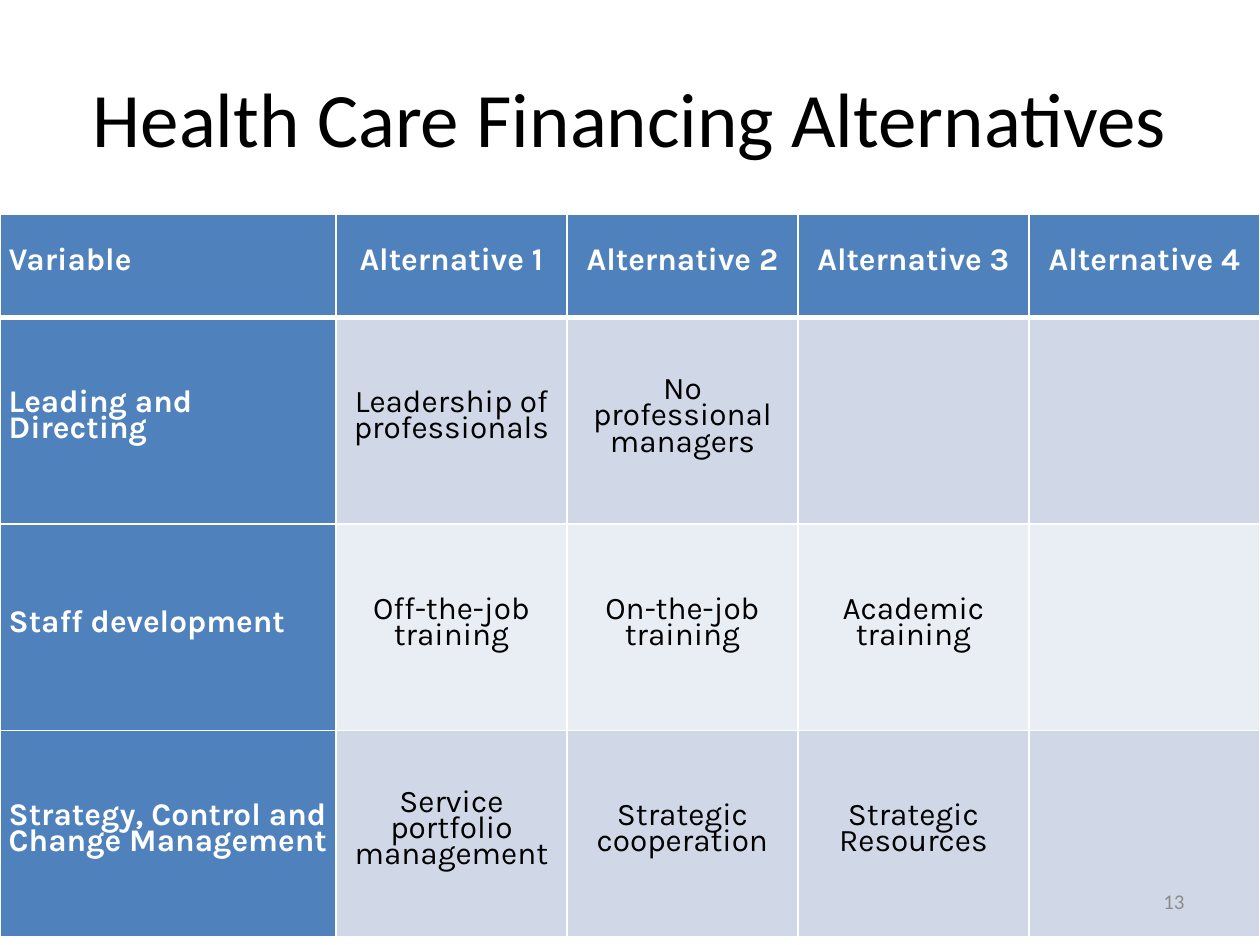
import pptx
import pptx.util
import pptx.dml.color
import pptx.enum.text
import pptx.oxml
import pptx.oxml.ns

Pt = pptx.util.Pt
RGB = pptx.dml.color.RGBColor
ALIGN = pptx.enum.text.PP_ALIGN
MIDDLE = pptx.enum.text.MSO_ANCHOR.MIDDLE

BLACK = RGB(0x00, 0x00, 0x00)
WHITE = RGB(0xFF, 0xFF, 0xFF)
GRAY = RGB(0x8C, 0x8C, 0x8C)
BLUE = RGB(0x4F, 0x81, 0xBD)
BANDS = [RGB(0xE9, 0xED, 0xF4), RGB(0xD0, 0xD8, 0xE8)]

ROWS = [
    ["Variable", "Alternative 1", "Alternative 2", "Alternative 3", "Alternative 4"],
    ["Leading and Directing", "Leadership of professionals",
     "No professional managers", "", ""],
    ["Staff development", "Off-the-job training", "On-the-job training",
     "Academic training", ""],
    ["Strategy, Control and Change Management", "Service portfolio management",
     "Strategic cooperation", "Strategic Resources", ""],
]


def style(par, name, size, color, align, bold=False):
    par.alignment = align
    for run in par.runs:
        run.font.name = name
        run.font.size = Pt(size)
        run.font.bold = bold
        run.font.color.rgb = color


def border(cell, side, width):
    cell._tc.get_or_add_tcPr().append(pptx.oxml.parse_xml(
        f'<a:{side} {pptx.oxml.ns.nsdecls("a")} w="{Pt(width)}">'
        f'<a:solidFill><a:srgbClr val="{WHITE}"/></a:solidFill></a:{side}>'))


prs = pptx.Presentation()
prs.slide_width, prs.slide_height = Pt(720), Pt(540)
slide = prs.slides.add_slide(prs.slide_layouts[5])

# Title
title = slide.shapes.title
title.left, title.top, title.width, title.height = Pt(36), Pt(21.6), Pt(648), Pt(90)
title.text_frame.text = "Health Care Financing Alternatives"
title.text_frame.vertical_anchor = MIDDLE
style(title.text_frame.paragraphs[0], "Calibri", 44, BLACK, ALIGN.CENTER)

# Table grid
table = slide.shapes.add_table(
    len(ROWS), len(ROWS[0]), Pt(0), Pt(122.4), Pt(720), Pt(413)).table
for c, col in enumerate(table.columns):
    col.width = Pt(132 if c else 192)
for r, row in enumerate(table.rows):
    row.height = Pt(118 if r else 59)

# Table cells
for r, texts in enumerate(ROWS):
    for c, text in enumerate(texts):
        cell = table.cell(r, c)
        head = r == 0 or c == 0
        for side in ("lnL", "lnR", "lnT", "lnB"):
            thick = (r == 0 and side == "lnB") or (r == 1 and side == "lnT")
            border(cell, side, 3 if thick else 1)
        cell.fill.solid()
        cell.fill.fore_color.rgb = BLUE if head else BANDS[r % 2]
        cell.vertical_anchor = MIDDLE
        cell.margin_left = cell.margin_right = Pt(5)
        cell.margin_top = cell.margin_bottom = Pt(0)
        if text:
            cell.text_frame.text = text
            par = cell.text_frame.paragraphs[0]
            par.line_spacing = Pt(15)
            par.space_before = Pt(6)
            style(par, "Karla", 18, WHITE if head else BLACK,
                  ALIGN.CENTER if c else ALIGN.LEFT, head)

# Slide number
num = slide.shapes.add_textbox(Pt(516), Pt(500.4), Pt(168), Pt(28.8))
num.text_frame.word_wrap = True
num.text_frame.vertical_anchor = MIDDLE
num.text_frame.text = "13"
style(num.text_frame.paragraphs[0], "Calibri", 12, GRAY, ALIGN.RIGHT)

prs.save("out.pptx")
